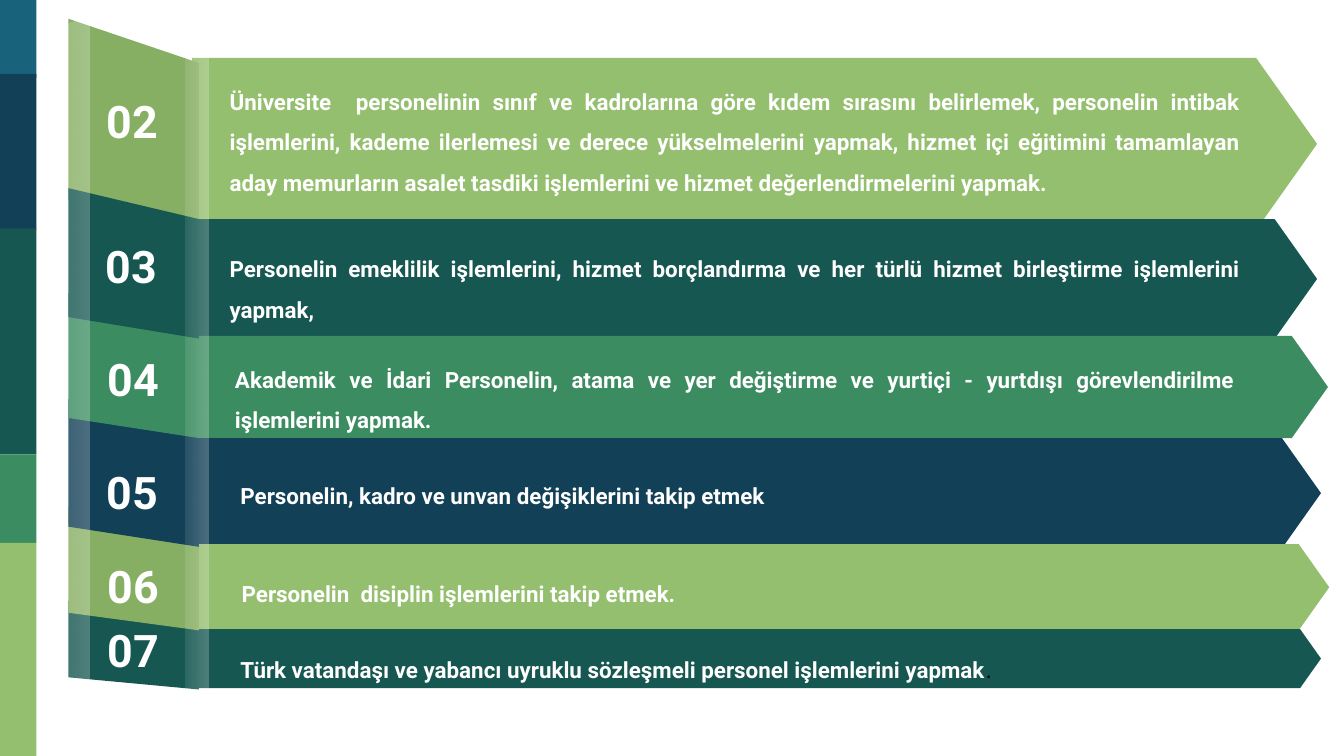
from lxml.etree import SubElement
from pptx import Presentation
from pptx.dml.color import RGBColor
from pptx.enum.shapes import MSO_SHAPE
from pptx.enum.text import MSO_ANCHOR, PP_ALIGN
from pptx.oxml.ns import qn
from pptx.util import Pt

COLORS = {
    "teal": "18637B",
    "navy": "124057",
    "forest": "165751",
    "green": "3B8D61",
    "lime": "94BF6E",
    "olive": "87AF64",
    "white": "FFFFFF",
    "black": "000000",
}
NUMBER_FONT = {"name": "Roboto", "size": Pt(24), "bold": True}
DUTY_FONT = {"name": "Roboto", "size": Pt(12), "bold": True}
STOP_FONT = {"name": "Arial", "size": Pt(12), "bold": False}
NUMBER_FORMAT = {"alignment": PP_ALIGN.CENTER}
DUTY_FORMAT = {"alignment": PP_ALIGN.JUSTIFY, "line_spacing": 1.5}
FRAME_FORMAT = {
    "word_wrap": True,
    "vertical_anchor": MSO_ANCHOR.MIDDLE,
    "margin_left": Pt(7.2),
    "margin_right": Pt(7.2),
    "margin_top": Pt(3.6),
    "margin_bottom": Pt(3.6),
}

SIDEBAR = [("teal", 0, 41.8), ("navy", 39.6, 83.5), ("forest", 122.4, 121),
           ("green", 243.4, 47.5), ("lime", 290.9, 114.1)]

FOLD_LEFT, FOLD_WIDTH = 36.7, 69.9
FOLDS = [
    ("forest", 321.8, 47.6, 9.4, 6.5),
    ("olive", 271.4, 66.3, 13.7, 9.4),
    ("olive", 10.1, 113, 23.7, 15.8),
    ("navy", 213.8, 79.2, 16.6, 10.8),
    ("green", 157, 77.7, 16.5, 10.8),
    ("forest", 100.8, 80.6, 16.6, 11.5),
]
STRIPS = [((21.6, 7.2, 26.4, 388.1), 12.2, 13.7),
          ((99.4, 8.6, 12.2, 398.2), 12.2, 14.4)]

BANDS = [
    {"color": "lime", "arrow": (103, 31, 602.6, 92.2),
     "number": ("02", (47.5, 32.4, 46.8, 64.1)), "box": (115.9, 38.2, 555.8, 68.4),
     "duty": "Üniversite  personelinin sınıf ve kadrolarına göre kıdem sırasını "
             "belirlemek, personelin intibak işlemlerini, kademe ilerlemesi ve derece "
             "yükselmelerini yapmak, hizmet içi eğitimini tamamlayan aday memurların "
             "asalet tasdiki işlemlerini ve hizmet değerlendirmelerini yapmak."},
    {"color": "forest", "arrow": (103, 117.4, 602.6, 64.1),
     "number": ("03", (46.8, 110.2, 46.8, 64.1)), "box": (115.9, 128.2, 555.8, 46.1),
     "duty": "Personelin emeklilik işlemlerini, hizmet borçlandırma ve her türlü "
             "hizmet birleştirme işlemlerini yapmak,"},
    {"color": "green", "arrow": (103, 180, 608.4, 54.7),
     "number": ("04", (48.2, 180, 46.8, 45.4)), "box": (118.8, 185.8, 550, 49),
     "duty": "Akademik ve İdari Personelin, atama ve yer değiştirme ve yurtiçi - "
             "yurtdışı görevlendirilme işlemlerini yapmak."},
    {"color": "navy", "arrow": (105.1, 234.7, 602.6, 59),
     "number": ("05", (47.5, 231.1, 46.8, 64.1)), "box": (121.7, 236.2, 550, 51.1),
     "duty": "Personelin, kadro ve unvan değişiklerini takip etmek"},
    {"color": "lime", "arrow": (105.1, 291.6, 607, 46.1),
     "number": ("06", (48.2, 281.5, 46.8, 64.1)), "box": (122.4, 303.8, 555.8, 21.6),
     "duty": "Personelin  disiplin işlemlerini takip etmek."},
    {"color": "forest", "arrow": (105.1, 337, 602.6, 31.7),
     "number": ("07", (48.2, 316.1, 46.8, 64.1)), "box": (121.7, 344.2, 555.8, 21.6),
     "duty": "Türk vatandaşı ve yabancı uyruklu sözleşmeli personel işlemlerini yapmak",
     "stop": "."},
]


def rgb(color):
    """Return the RGB value of a named colour."""
    return RGBColor.from_string(COLORS[color])


def apply(target, values):
    """Set every attribute of a dict of format values."""
    for name, value in values.items():
        setattr(target, name, value)


def paint(shape, color):
    """Give a shape a plain fill without line or shadow."""
    shape.shadow.inherit = False
    shape.line.fill.background()
    shape.fill.solid()
    shape.fill.fore_color.rgb = rgb(color)


def add_block(slide, preset, box, color):
    """Place a preset shape in a box."""
    block = slide.shapes.add_shape(preset, *map(Pt, box))
    paint(block, color)
    return block


def add_outline(slide, corners, color):
    """Draw a closed outline through its corners."""
    points = [(Pt(x), Pt(y)) for x, y in corners]
    builder = slide.shapes.build_freeform(*points[0])
    builder.add_line_segments(points[1:], close=True)
    outline = builder.convert_to_shape()
    paint(outline, color)
    return outline


def add_text(slide, box, runs, paragraph_format):
    """Write one paragraph of (text, font, colour) runs in a box."""
    frame = slide.shapes.add_textbox(*map(Pt, box)).text_frame
    apply(frame, FRAME_FORMAT)
    paragraph = frame.paragraphs[0]
    apply(paragraph, paragraph_format)
    for text, font, color in runs:
        run = paragraph.add_run()
        run.text = text
        apply(run.font, font)
        run.font.color.rgb = rgb(color)


def add_sidebar(slide, left, width):
    """Stack the coloured blocks of the sidebar."""
    for color, top, height in SIDEBAR:
        add_block(slide, MSO_SHAPE.RECTANGLE, (left, top, width, height), color)


def add_fold(slide, box, drop, rise, color):
    """Draw a ribbon fold that slants down to the right."""
    left, top, width, height = box
    right, bottom = left + width, top + height
    add_outline(slide, [(left, top), (right, top + drop), (right, bottom),
                        (left, bottom - rise)], color)


def add_strip(slide, box, drop, rise):
    """Lay a translucent light strip over the ribbon."""
    left, top, width, height = box
    right, bottom = left + width, top + height
    strip = add_outline(slide, [(left, bottom - rise), (left, top + drop),
                                (right, top), (right, bottom)], "white")
    strip.fill.gradient()
    strip.fill.gradient_angle = 0
    for stop in strip.fill.gradient_stops:
        stop.color.rgb = rgb("white")
    tints = strip.fill._xPr.iter(qn("a:srgbClr"))
    for tint, alpha in zip(tints, ("10000", "25000")):
        SubElement(tint, qn("a:alpha")).set("val", alpha)


def add_arrow(slide, box, color):
    """Place the arrow of one band."""
    arrow = add_block(slide, MSO_SHAPE.PENTAGON, box, color)
    arrow.adjustments[0] = 0.354


def add_band_text(slide, band):
    """Write the number and the duty of one band."""
    number, number_box = band["number"]
    add_text(slide, number_box, [(number, NUMBER_FONT, "white")], NUMBER_FORMAT)
    runs = [(band["duty"], DUTY_FONT, "white")]
    if "stop" in band:
        runs.append((band["stop"], STOP_FONT, "black"))
    add_text(slide, band["box"], runs, DUTY_FORMAT)


def main():
    """Build the slide of personnel duties."""
    deck = Presentation()
    apply(deck, {"slide_width": Pt(720), "slide_height": Pt(405)})
    slide = deck.slides.add_slide(deck.slide_layouts[6])
    add_sidebar(slide, 0, 19.5)
    for band in BANDS:
        add_arrow(slide, band["arrow"], band["color"])
    for color, top, height, drop, rise in FOLDS:
        add_fold(slide, (FOLD_LEFT, top, FOLD_WIDTH, height), drop, rise, color)
    for box, drop, rise in STRIPS:
        add_strip(slide, box, drop, rise)
    for band in BANDS:
        add_band_text(slide, band)
    deck.save("out.pptx")


if __name__ == "__main__":
    main()
